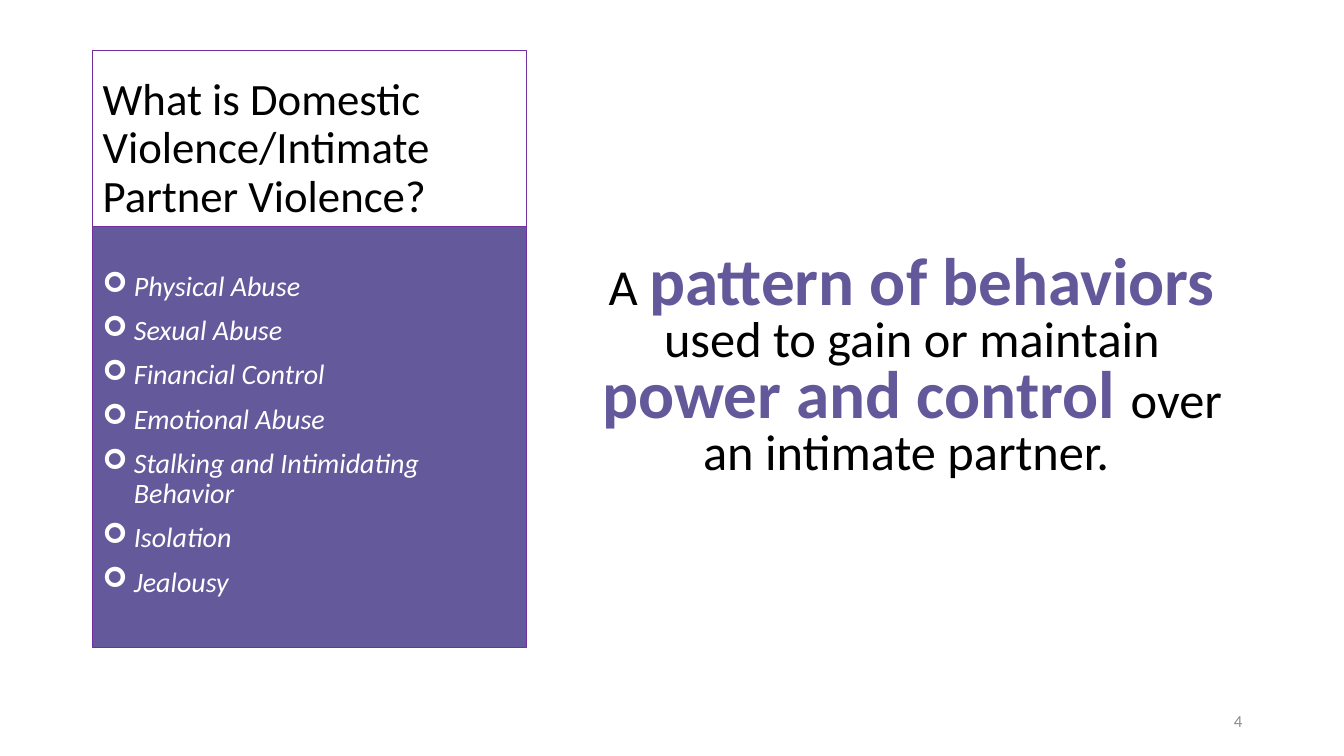
from lxml.etree import SubElement
from pptx import Presentation
from pptx.dml.color import RGBColor
from pptx.enum.shapes import MSO_SHAPE as Shape
from pptx.enum.text import MSO_ANCHOR as Anchor, PP_ALIGN as Align
from pptx.oxml.ns import qn
from pptx.util import Inches, Pt

FONT = "Calibri"
COLORS = {
    "text": "000000",
    "accent": "63589A",
    "panel": "64599B",
    "border": "7030A0",
    "list": "FFFFFF",
    "number": "8C8C8C",
}
PANEL_LEFT, PANEL_WIDTH = 0.92, 4.3
ABUSE_TYPES = [
    "Physical Abuse",
    "Sexual Abuse",
    "Financial Control",
    "Emotional Abuse",
    "Stalking and Intimidating Behavior",
    "Isolation",
    "Jealousy",
]
STATEMENT = [
    ("A ", False),
    ("pattern of behaviors ", True),
    ("used to gain or maintain ", False),
    ("power and control ", True),
    ("over an intimate partner. ", False),
]


def color(name):
    """Return the named colour."""
    return RGBColor.from_string(COLORS[name])


def style(font, size, color_name):
    """Set the typeface, size and colour of a font."""
    font.name = FONT
    font.size = Pt(size)
    font.color.rgb = color(color_name)


def set_frame(box, anchor, top_margin=0.05):
    """Wrap and anchor the text of a box and return its frame."""
    frame = box.text_frame
    frame.word_wrap = True
    frame.vertical_anchor = anchor
    frame.margin_top = Inches(top_margin)
    return frame


def add_panel(page, top, height, fill=None):
    """Add a bordered rectangle in the left column."""
    panel = page.shapes.add_shape(
        Shape.RECTANGLE, Inches(PANEL_LEFT), Inches(top), Inches(PANEL_WIDTH), Inches(height)
    )
    panel.shadow.inherit = False
    if fill:
        panel.fill.solid()
        panel.fill.fore_color.rgb = color(fill)
    else:
        panel.fill.background()
    panel.line.color.rgb = color("border")
    panel.line.width = Pt(0.75)
    return panel


def add_text_box(page, left, top, width, height):
    """Add an empty text box."""
    return page.shapes.add_textbox(Inches(left), Inches(top), Inches(width), Inches(height))


def write_line(box, text, size, color_name, align, anchor, spacing=1.0):
    """Write one paragraph of uniform text into a box."""
    para = set_frame(box, anchor).paragraphs[0]
    para.text = text
    para.alignment = align
    para.line_spacing = spacing
    style(para.font, size, color_name)


def add_bullet(para, symbol, indent):
    """Give a paragraph a hanging bullet."""
    properties = para._p.get_or_add_pPr()
    properties.set("marL", str(Inches(indent)))
    properties.set("indent", str(-Inches(indent)))
    SubElement(properties, qn("a:buFont"), typeface="Wingdings")
    SubElement(properties, qn("a:buChar"), char=symbol)


def write_list(box, items):
    """Write the bulleted items into a box."""
    frame = set_frame(box, Anchor.TOP, 0.45)
    for index, item in enumerate(items):
        para = frame.add_paragraph() if index else frame.paragraphs[0]
        para.text = item
        para.alignment = Align.LEFT
        para.line_spacing = 0.9
        para.space_before = Pt(10 if index else 0)
        style(para.font, 20, "list")
        para.font.italic = True
        add_bullet(para, "➢", 0.31)


def write_statement(box, parts):
    """Write the centred statement with its emphasised words."""
    para = set_frame(box, Anchor.TOP, 1.44).paragraphs[0]
    para.alignment = Align.CENTER
    para.line_spacing = 0.8
    for text, emphasised in parts:
        span = para.add_run()
        span.text = text
        style(span.font, 48 if emphasised else 36, "accent" if emphasised else "text")
        span.font.bold = emphasised


def main():
    """Build the slide and save it."""
    deck = Presentation()
    deck.slide_width, deck.slide_height = Inches(13.33), Inches(7.5)
    page = deck.slides.add_slide(deck.slide_layouts[6])
    title = add_panel(page, 0.5, 1.75)
    write_line(title, "What is Domestic Violence/Intimate Partner Violence?",
               32, "text", Align.LEFT, Anchor.BOTTOM, 0.9)
    write_statement(add_text_box(page, 5.67, 1.08, 6.75, 5.33), STATEMENT)
    write_list(add_panel(page, 2.25, 4.17, "panel"), ABUSE_TYPES)
    number = add_text_box(page, 9.42, 6.95, 3, 0.4)
    write_line(number, "4", 12, "number", Align.RIGHT, Anchor.MIDDLE)
    deck.save("out.pptx")


if __name__ == "__main__":
    main()
